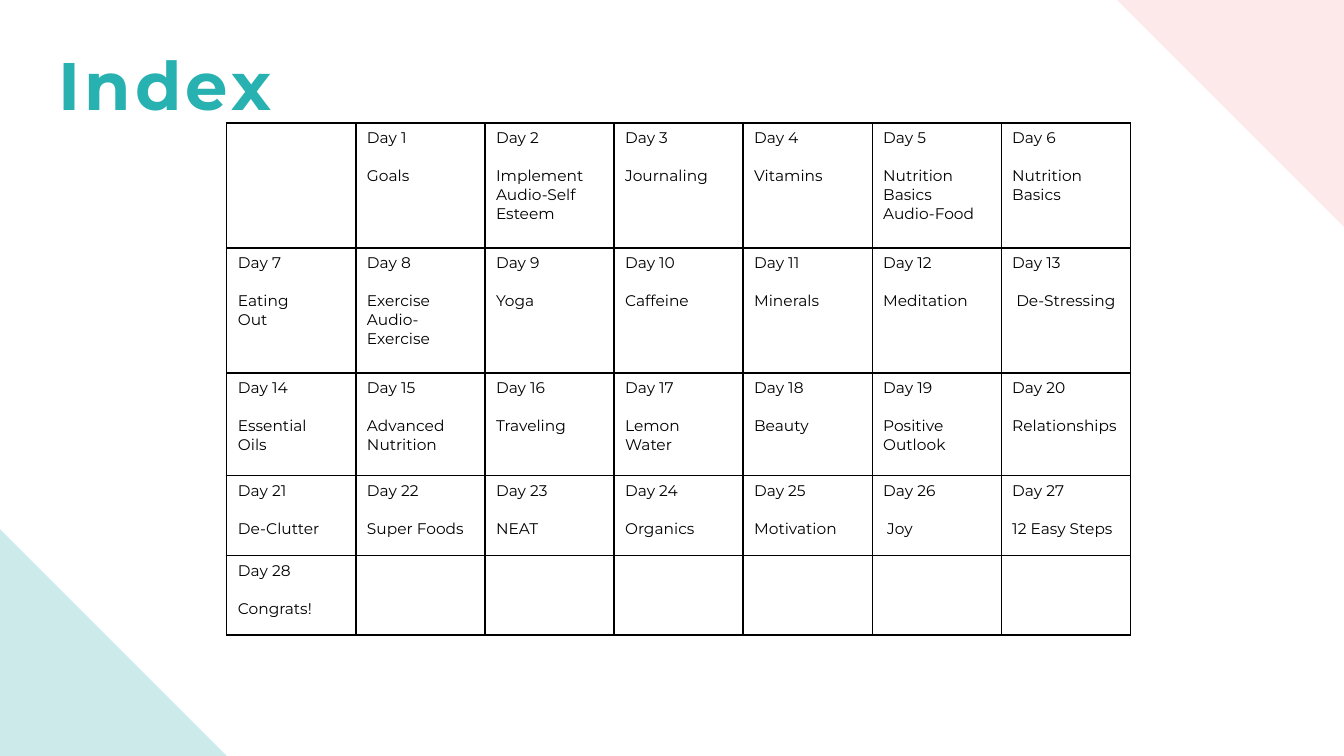
from dataclasses import dataclass

from lxml.etree import SubElement
from pptx import Presentation
from pptx.dml.color import RGBColor as Color
from pptx.enum.shapes import MSO_SHAPE as Preset
from pptx.enum.text import MSO_AUTO_SIZE as AutoSize
from pptx.oxml.ns import qn
from pptx.util import Inches, Pt

COLUMN_COUNT = 7
COLUMN_WIDTH = 1.28
ROW_HEIGHTS = [1.24, 1.24, 1.02, 0.79, 0.79]
TRIANGLE_SIDE = 2.25

TOPICS = [
    ["Goals"], ["Implement", "Audio-Self Esteem"], ["Journaling"], ["Vitamins"],
    ["Nutrition Basics", "Audio-Food"], ["Nutrition", "Basics"],
    ["Eating", "Out"], ["Exercise", "Audio-Exercise"], ["Yoga"], ["Caffeine"],
    ["Minerals"], ["Meditation"], [" De-Stressing"],
    ["Essential", "Oils"], ["Advanced Nutrition"], ["Traveling"], ["Lemon", "Water"],
    ["Beauty"], ["Positive Outlook"], ["Relationships"],
    ["De-Clutter"], ["Super Foods"], ["NEAT"], ["Organics"],
    ["Motivation"], [" Joy"], ["12 Easy Steps"],
    ["Congrats!"],
]


@dataclass(frozen=True)
class Theme:
    """Fonts, type sizes and colours of the slide."""

    font: str = "Montserrat"
    title_size: int = 48
    title_spacing: int = 3
    body_size: int = 11
    topic_gap: float = 13.5
    border_width: int = 1
    title: str = "27B2B1"
    text: str = "000000"
    border: str = "000000"
    paper: str = "FFFFFF"
    pink: str = "FDE9E9"
    mint: str = "CCEAEA"


class SlideBuilder:
    """Draws themed elements on one slide."""

    def __init__(self, slide, theme):
        """Keep the slide and its theme."""
        self.slide = slide
        self.theme = theme

    def style(self, paragraph, size, color, bold=False):
        """Set the font of a whole paragraph."""
        font = paragraph.font
        font.name = self.theme.font
        font.size = Pt(size)
        font.bold = bold
        font.color.rgb = Color.from_string(color)

    def corner(self, left, top, color, rotation=0):
        """Add a right triangle that fills a slide corner."""
        side = Inches(TRIANGLE_SIDE)
        shape = self.slide.shapes.add_shape(
            Preset.RIGHT_TRIANGLE, Inches(left), Inches(top), side, side)
        shape.rotation = rotation
        shape.shadow.inherit = False
        shape.fill.solid()
        shape.fill.fore_color.rgb = Color.from_string(color)
        shape.line.fill.background()

    def title(self, text, left, top, width, height):
        """Add the letter-spaced slide title."""
        box = self.slide.shapes.add_textbox(
            Inches(left), Inches(top), Inches(width), Inches(height))
        frame = box.text_frame
        frame.word_wrap = False
        frame.auto_size = AutoSize.SHAPE_TO_FIT_TEXT
        paragraph = frame.paragraphs[0]
        run = paragraph.add_run()
        run.text = text
        run._r.get_or_add_rPr().set("spc", str(self.theme.title_spacing * 100))
        self.style(paragraph, self.theme.title_size, self.theme.title, bold=True)

    def format_cell(self, cell):
        """Give a cell its insets, borders and fill."""
        cell.margin_left = cell.margin_right = Inches(0.11)
        cell.margin_top = cell.margin_bottom = Inches(0.06)
        properties = cell._tc.get_or_add_tcPr()
        for side in ("a:lnL", "a:lnR", "a:lnT", "a:lnB"):
            line = SubElement(properties, qn(side), w=str(Pt(self.theme.border_width)))
            fill = SubElement(line, qn("a:solidFill"))
            SubElement(fill, qn("a:srgbClr"), val=self.theme.border)
        cell.fill.solid()
        cell.fill.fore_color.rgb = Color.from_string(self.theme.paper)

    def write_day(self, cell, day, topic):
        """Write the day number with its topic set apart below."""
        cell.text = "\n".join([f"Day {day}", *topic])
        paragraphs = cell.text_frame.paragraphs
        for paragraph in paragraphs:
            self.style(paragraph, self.theme.body_size, self.theme.text)
        paragraphs[1].space_before = Pt(self.theme.topic_gap)

    def calendar(self, left, top, topics):
        """Add the day table, whose first cell stays empty."""
        table = self.slide.shapes.add_table(
            len(ROW_HEIGHTS), COLUMN_COUNT, Inches(left), Inches(top),
            Inches(COLUMN_WIDTH * COLUMN_COUNT), Inches(sum(ROW_HEIGHTS))).table
        table.first_row = table.horz_banding = False
        for column in table.columns:
            column.width = Inches(COLUMN_WIDTH)
        for row, height in zip(table.rows, ROW_HEIGHTS):
            row.height = Inches(height)
        for cell in table.iter_cells():
            self.format_cell(cell)
        for day, topic in enumerate(topics, start=1):
            self.write_day(table.cell(*divmod(day, COLUMN_COUNT)), day, topic)


def main():
    """Build and save the index slide."""
    presentation = Presentation()
    presentation.slide_width = Inches(13.33)
    presentation.slide_height = Inches(7.5)
    slide = presentation.slides.add_slide(presentation.slide_layouts[6])
    theme = Theme()
    builder = SlideBuilder(slide, theme)
    builder.corner(13.33 - TRIANGLE_SIDE, 0, theme.pink, rotation=180)
    builder.corner(0, 7.5 - TRIANGLE_SIDE, theme.mint)
    builder.title("Index", 0.48, 0.38, 2.33, 0.91)
    builder.calendar(2.25, 1.22, TOPICS)
    presentation.save("out.pptx")


if __name__ == "__main__":
    main()
